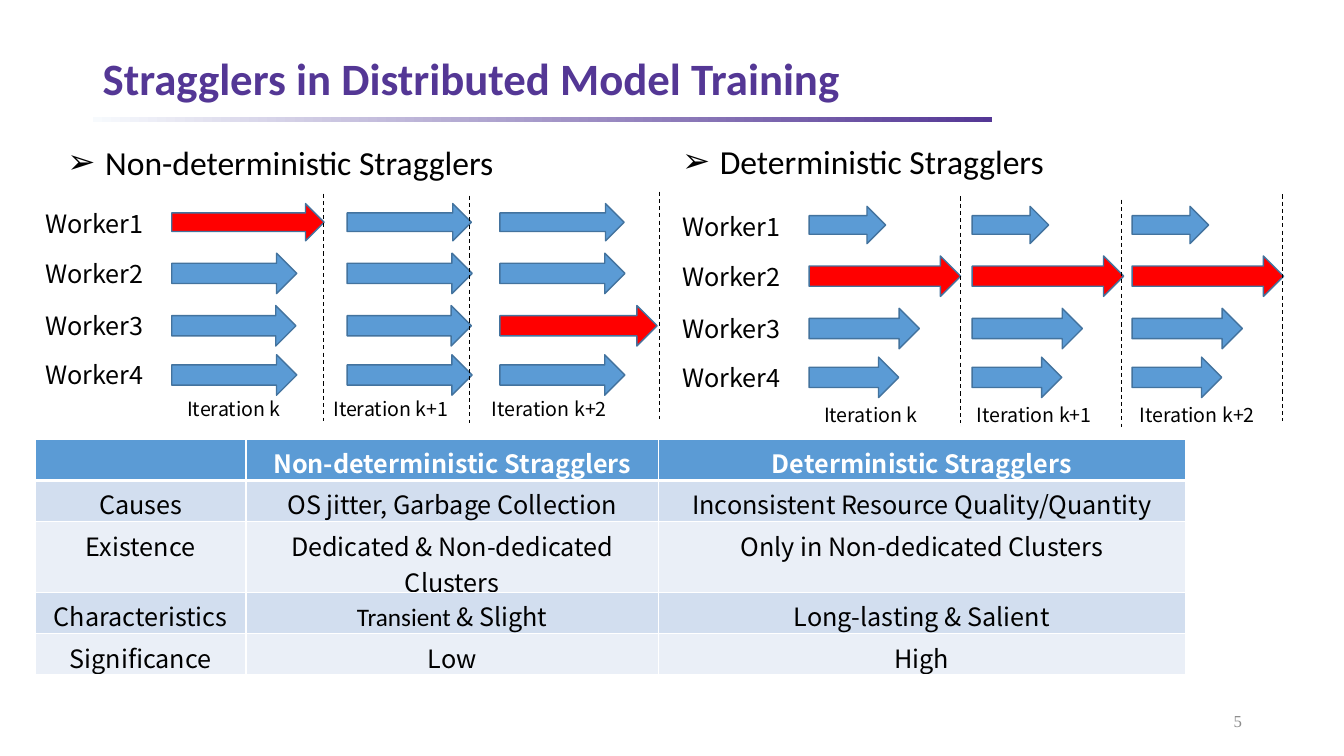
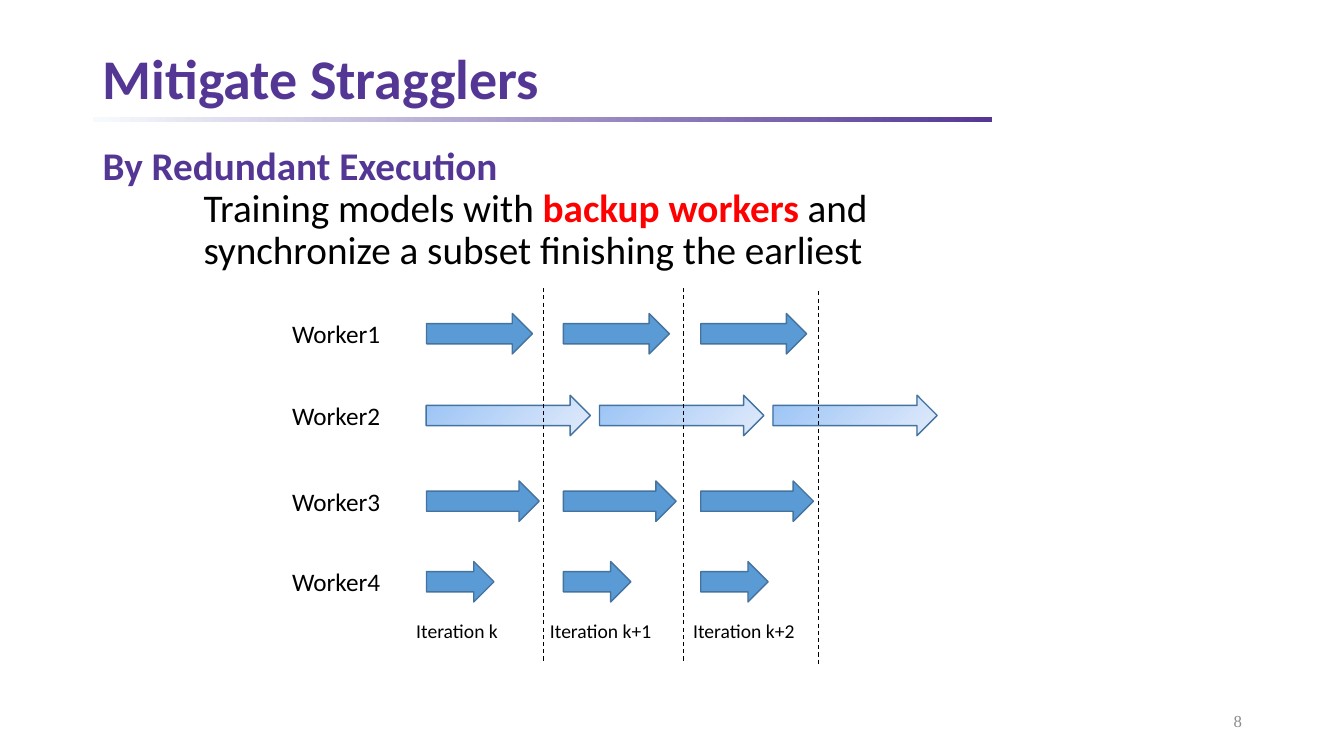
import dataclasses

import lxml.etree
import pptx
import pptx.dml.color
import pptx.enum.dml
import pptx.enum.shapes
import pptx.enum.text
import pptx.oxml.ns
import pptx.util

Cm = pptx.util.Cm
Pt = pptx.util.Pt
ALIGN = pptx.enum.text.PP_ALIGN
ANCHOR = pptx.enum.text.MSO_ANCHOR
SHAPE = pptx.enum.shapes.MSO_SHAPE

PURPLE, BLACK, WHITE, RED = "543795", "000000", "FFFFFF", "FF0000"
BLUE, OUTLINE, GRAY = "5B9BD5", "43739E", "8C8C8C"
BANDS = ("D2DEEF", "EAEFF7")
PALE = ("9AC3F5", "E1EBFB")
SANS, CJK, SERIF = "Calibri", "Noto Sans CJK SC", "Times New Roman"
SLOW_LENGTH = 3.5


@dataclasses.dataclass
class Lane:
    top: float
    lengths: tuple
    starts: tuple = ()
    height: float = 1.02


def rgb(value):
    return pptx.dml.color.RGBColor.from_string(value)


def add_element(parent, tag, **attributes):
    return lxml.etree.SubElement(parent, pptx.oxml.ns.qn(tag), attributes)


def write(para, text, size=18, font=SANS, color=BLACK, bold=False):
    span = para.add_run()
    span.text = text
    span.font.size = Pt(size)
    span.font.name = font
    span.font.bold = bold
    span.font.color.rgb = rgb(color)


def indent(para, left, first=0):
    properties = para._p.get_or_add_pPr()
    properties.set("marL", str(Cm(left)))
    properties.set("indent", str(Cm(first)))
    return properties


def paint(shape, color, angle):
    if isinstance(color, str):
        shape.fill.solid()
        shape.fill.fore_color.rgb = rgb(color)
        return
    shape.fill.gradient()
    shape.fill.gradient_angle = angle
    for stop, value in zip(shape.fill.gradient_stops, color):
        stop.color.rgb = rgb(value)


class Deck:
    def __init__(self):
        self.deck = pptx.Presentation()
        self.deck.slide_width = Cm(33.87)
        self.deck.slide_height = Cm(19.05)
        self.page = None

    def add_page(self, title, number, size):
        self.page = self.deck.slides.add_slide(self.deck.slide_layouts[6])
        self.shape(SHAPE.RECTANGLE, 2.34, 2.95, 22.66, 0.13, ("F7FAFD", PURPLE))
        para = self.box(2.34, 1.09, 29.21, 1.9, ANCHOR.MIDDLE)
        para.line_spacing = 0.9
        write(para, title, size=size, color=PURPLE, bold=True)
        para = self.box(23.93, 17.65, 7.62, 1.02, ANCHOR.MIDDLE)
        para.alignment = ALIGN.RIGHT
        write(para, str(number), size=12, font=SERIF, color=GRAY)

    def box(self, left, top, width, height, anchor=ANCHOR.TOP):
        box = self.page.shapes.add_textbox(Cm(left), Cm(top), Cm(width), Cm(height))
        box.text_frame.word_wrap = True
        box.text_frame.vertical_anchor = anchor
        return box.text_frame.paragraphs[0]

    def shape(self, kind, left, top, width, height, color, line=None, angle=0):
        shape = self.page.shapes.add_shape(kind, Cm(left), Cm(top), Cm(width), Cm(height))
        shape.shadow.inherit = False
        paint(shape, color, angle)
        if line:
            shape.line.color.rgb = rgb(line)
            shape.line.width = Pt(1)
        else:
            shape.line.fill.background()

    def dashed_line(self, x, top, length):
        line = self.page.shapes.add_connector(
            pptx.enum.shapes.MSO_CONNECTOR.STRAIGHT, Cm(x), Cm(top), Cm(x), Cm(top + length))
        line.line.color.rgb = rgb(BLACK)
        line.line.width = Pt(0.75)
        line.line.dash_style = pptx.enum.dml.MSO_LINE.DASH
        add_element(line._element.spPr, "a:effectLst")

    def bullet(self, text, left, top):
        para = self.box(left, top, 14.58, 1.27)
        properties = indent(para, 0.95, -0.95)
        add_element(properties, "a:buFont", typeface="Arial")
        add_element(properties, "a:buChar", char="➢")
        write(para, text, size=24)

    def timeline(self, lanes, starts, label_left, barriers, barrier_length,
                 captions, caption_top, font=CJK, slow=RED):
        for number, lane in enumerate(lanes, 1):
            write(self.box(label_left, lane.top, 3.3, 1), f"Worker{number}", font=font)
            for start, length in zip(lane.starts or starts, lane.lengths):
                color = slow if length > SLOW_LENGTH else BLUE
                self.shape(SHAPE.RIGHT_ARROW, start, lane.top, length, lane.height,
                           color, OUTLINE, angle=315)
        for x, top in barriers:
            self.dashed_line(x, top, barrier_length)
        for left, suffix in zip(captions, ("", "+1", "+2")):
            write(self.box(left, caption_top, 4.1, 0.86), "Iteration k" + suffix,
                  size=14, font=font)

    def table(self, rows, widths, left, top, row_height):
        table = self.page.shapes.add_table(
            len(rows), len(widths), Cm(left), Cm(top),
            Cm(sum(widths)), Cm(row_height * len(rows))).table
        for column, width in zip(table.columns, widths):
            column.width = Cm(width)
        for r, row in enumerate(rows):
            for c, spans in enumerate(row):
                self.cell(table.cell(r, c), spans, r)

    def cell(self, cell, spans, row):
        header = row == 0
        properties = cell._tc.get_or_add_tcPr()
        thick = {0: "a:lnB", 1: "a:lnT"}.get(row)
        for tag in ("a:lnL", "a:lnR", "a:lnT", "a:lnB"):
            edge = add_element(properties, tag, w=str(Pt(3 if tag == thick else 1)))
            add_element(add_element(edge, "a:solidFill"), "a:srgbClr", val=WHITE)
        cell.fill.solid()
        cell.fill.fore_color.rgb = rgb(BLUE if header else BANDS[(row - 1) % 2])
        para = cell.text_frame.paragraphs[0]
        para.alignment = ALIGN.CENTER
        for text, font in [(spans, CJK)] if isinstance(spans, str) else spans:
            write(para, text, font=font, color=WHITE if header else BLACK, bold=header)


def add_stragglers(deck):
    deck.add_page("Stragglers in Distributed Model Training", 5, 32)
    deck.table(
        [("", "Non-deterministic Stragglers", "Deterministic Stragglers"),
         ("Causes", "OS jitter, Garbage Collection", "Inconsistent Resource Quality/Quantity"),
         ("Existence", "Dedicated & Non-dedicated Clusters", "Only in Non-dedicated Clusters"),
         ("Characteristics", [("Transient", SANS), (" & Slight", CJK)], "Long-lasting & Salient"),
         ("Significance", "Low", "High")],
        widths=(5.31, 10.39, 13.28), left=0.89, top=11.07, row_height=1.04)
    deck.bullet("Non-deterministic Stragglers", 1.45, 3.45)
    deck.bullet("Deterministic Stragglers", 16.94, 3.43)
    deck.timeline(
        [Lane(5.13, (3.84, 3.13, 3.13), height=0.94),
         Lane(6.38, (3.15,) * 3),
         Lane(7.7, (3.13, 3.13, 3.96)),
         Lane(8.94, (3.15,) * 3)],
        starts=(4.33, 8.75, 12.6), label_left=0.89,
        barriers=((8.15, 4.88), (11.84, 4.93), (16.61, 4.83)), barrier_length=5.72,
        captions=(4.47, 8.15, 12.14), caption_top=9.88)
    deck.timeline(
        [Lane(5.2, (1.93,) * 3, height=0.94),
         Lane(6.45, (3.82,) * 3),
         Lane(7.77, (2.78,) * 3),
         Lane(9, (2.26,) * 3)],
        starts=(20.39, 24.5, 28.53), label_left=16.94,
        barriers=((24.21, 4.95), (28.27, 5.03), (32.33, 4.9)), barrier_length=5.72,
        captions=(20.52, 24.36, 28.47), caption_top=10.03)


def add_mitigation(deck):
    deck.add_page("Mitigate Stragglers", 8, 40)
    para = deck.box(2.34, 3.56, 28.98, 3.48)
    frame = para._parent
    write(para, "By Redundant Execution", size=28, color=PURPLE, bold=True)
    para = frame.add_paragraph()
    write(para, "Training models with ", size=28)
    write(para, "backup workers ", size=28, color=RED, bold=True)
    write(para, "and", size=28)
    write(frame.add_paragraph(), "synchronize a subset finishing the earliest", size=28)
    for para in frame.paragraphs:
        para.line_spacing = 0.9
    for para in frame.paragraphs[1:]:
        para.level = 1
        indent(para, 2.54)
    deck.timeline(
        [Lane(7.9, (2.67,) * 3),
         Lane(9.96, (4.14,) * 3, starts=(10.74, 15.11, 19.48)),
         Lane(12.12, (2.84,) * 3),
         Lane(14.15, (1.7,) * 3)],
        starts=(10.75, 14.2, 17.66), label_left=7.11,
        barriers=((13.69, 7.26), (17.22, 7.26), (20.62, 7.34)), barrier_length=9.4,
        captions=(10.24, 13.61, 17.22), caption_top=15.47, font=SANS, slow=PALE)


def main():
    deck = Deck()
    add_stragglers(deck)
    add_mitigation(deck)
    deck.deck.save("out.pptx")


if __name__ == "__main__":
    main()
